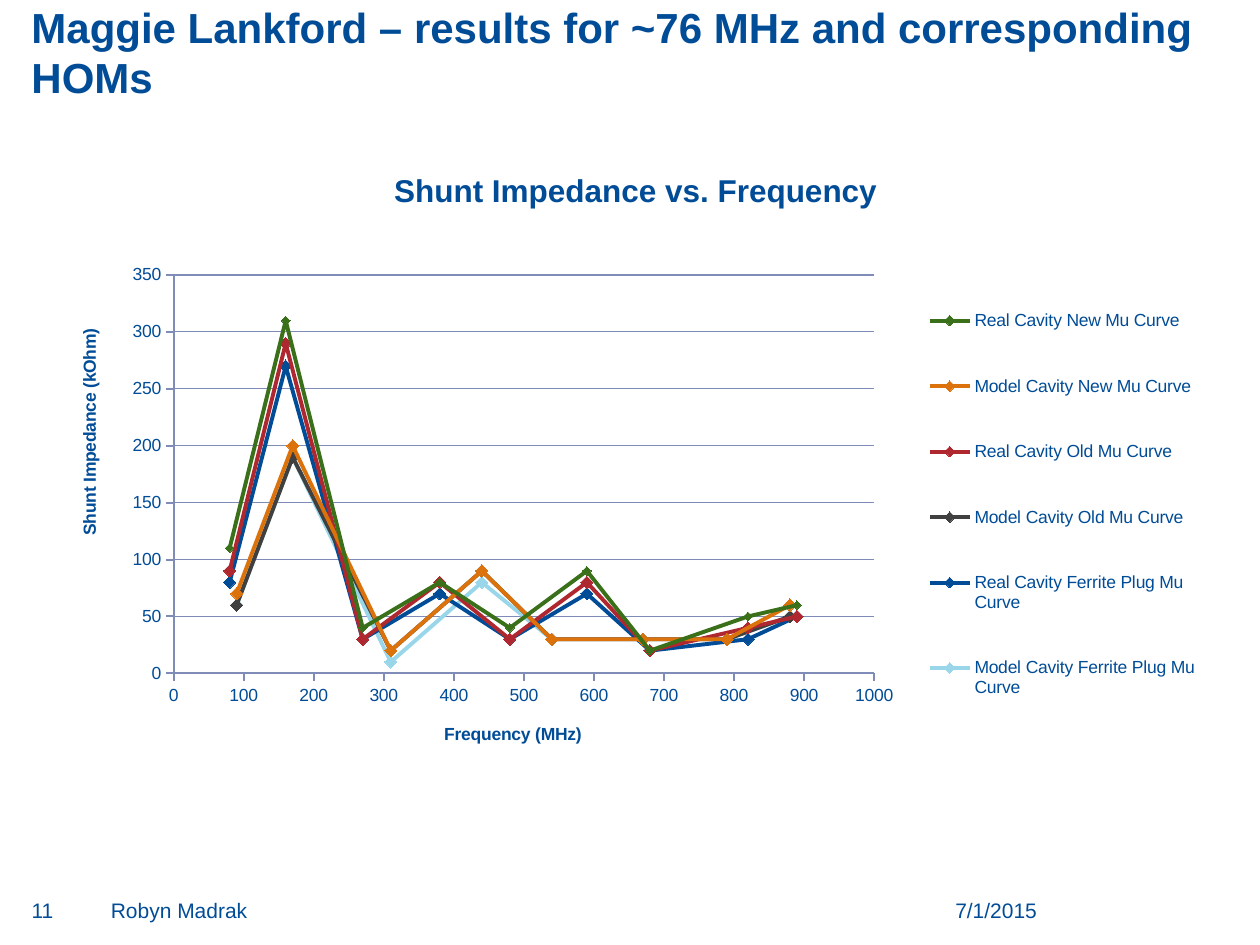
import pptx
import pptx.chart.data
import pptx.dml.color
import pptx.enum.chart
import pptx.enum.text
import pptx.oxml
import pptx.oxml.ns
import pptx.util
from pptx.util import Inches

FONT = "Arial"
COLORS = {"blue": "004C97", "green": "3A7019", "orange": "DB720C", "red": "AF272F",
          "gray": "404040", "sky": "99D6EA", "axis": "7F8CB8"}

# Resonant frequencies (MHz) of the two cavities
REAL = [80, 160, 270, 380, 480, 590, 680, 820, 890]
MODEL = [90, 170, 310, 440, 540, 670, 790, 880]

# Name, frequencies, shunt impedances (kOhm), colour, marker size
SERIES = [
    ("Real Cavity New Mu Curve", REAL, [110, 310, 40, 80, 40, 90, 20, 50, 60], "green", 5),
    ("Model Cavity New Mu Curve", MODEL, [70, 200, 20, 90, 30, 30, 30, 60], "orange", 7),
    ("Real Cavity Old Mu Curve", REAL, [90, 290, 30, 80, 30, 80, 20, 40, 50], "red", 7),
    ("Model Cavity Old Mu Curve", MODEL, [60, 190, 20, 90, 30, 30, 30, 50], "gray", 7),
    ("Real Cavity Ferrite Plug Mu Curve", REAL, [80, 270, 30, 70, 30, 70, 20, 30, 50], "blue", 7),
    ("Model Cavity Ferrite Plug Mu Curve", MODEL, [60, 190, 10, 80, 30, 30, 30, 50], "sky", 7),
]


def rgb(name):
    return pptx.dml.color.RGBColor.from_string(COLORS[name])


class SlideBuilder:
    def __init__(self, slide):
        self.slide = slide

    def style_font(self, font, size, bold=False):
        font.name = FONT
        font.size = pptx.util.Pt(size)
        font.bold = bold
        font.color.rgb = rgb("blue")

    def style_line(self, line, color, width):
        line.color.rgb = rgb(color)
        line.width = pptx.util.Pt(width)

    def text(self, text, left, top, width, height, size, bold=False, align="LEFT", anchor="TOP"):
        s = self.slide.shapes.add_textbox(Inches(left), Inches(top), Inches(width), Inches(height))
        tf = s.text_frame
        tf.word_wrap = True
        tf.margin_left = tf.margin_right = tf.margin_top = tf.margin_bottom = 0
        tf.vertical_anchor = getattr(pptx.enum.text.MSO_ANCHOR, anchor)
        p = tf.paragraphs[0]
        p.alignment = getattr(pptx.enum.text.PP_ALIGN, align)
        r = p.add_run()
        r.text = text
        self.style_font(r.font, size, bold)

    def place(self, element, x, y, w=None, h=None, inner=False):
        """Give a chart part a fixed place, as fractions of the chart."""
        for old in element.findall(pptx.oxml.ns.qn("c:layout")):
            element.remove(old)
        tags = '<c:layoutTarget val="inner"/>' if inner else ""
        tags += '<c:xMode val="edge"/><c:yMode val="edge"/>'
        for tag, value in zip("xywh", (x, y, w, h)):
            if value is not None:
                tags += f'<c:{tag} val="{value}"/>'
        layout = pptx.oxml.parse_xml(
            f'<c:layout {pptx.oxml.ns.nsdecls("c")}><c:manualLayout>{tags}'
            '</c:manualLayout></c:layout>')
        overlay = element.find(pptx.oxml.ns.qn("c:overlay"))
        if overlay is None:
            element.insert(0, layout)
        else:
            overlay.addprevious(layout)

    def chart_title(self, owner, text, size):
        r = owner.text_frame.paragraphs[0].add_run()
        r.text = text
        self.style_font(r.font, size, True)

    def axis(self, axis, title, maximum, step, grid):
        axis.minimum_scale, axis.maximum_scale, axis.major_unit = 0, maximum, step
        axis.major_tick_mark = pptx.enum.chart.XL_TICK_MARK.OUTSIDE
        axis.minor_tick_mark = pptx.enum.chart.XL_TICK_MARK.NONE
        axis.has_major_gridlines = grid
        if grid:
            self.style_line(axis.major_gridlines.format.line, "axis", 0.6)
        self.style_line(axis.format.line, "axis", 1.1)
        self.style_font(axis.tick_labels.font, 10)
        self.chart_title(axis.axis_title, title, 10)

    def scatter(self, left, top, width, height):
        data = pptx.chart.data.XyChartData()
        for name, xs, ys, _, _ in SERIES:
            series = data.add_series(name)
            for x, y in zip(xs, ys):
                series.add_data_point(x, y)
        chart = self.slide.shapes.add_chart(
            pptx.enum.chart.XL_CHART_TYPE.XY_SCATTER_LINES, Inches(left), Inches(top),
            Inches(width), Inches(height), data).chart
        self.style_font(chart.font, 10)

        # Title, axes and plot area
        chart.has_title = True
        self.chart_title(chart.chart_title, "Shunt Impedance vs. Frequency", 18)
        self.place(chart.chart_title._element, 0.29, 0.03)
        self.axis(chart.category_axis, "Frequency (MHz)", 1000, 100, False)
        self.axis(chart.value_axis, "Shunt Impedance (kOhm)", 350, 50, True)
        self.place(chart.value_axis.axis_title._element, 0.02, 0.27)
        plot = chart.plots[0]
        plot.vary_by_categories = False
        self.place(plot._element.getparent(), 0.105, 0.195, 0.603, 0.591, inner=True)

        # Legend
        chart.has_legend = True
        chart.legend.position = pptx.enum.chart.XL_LEGEND_POSITION.RIGHT
        chart.legend.include_in_layout = False
        self.style_font(chart.legend.font, 10)
        self.place(chart.legend._element, 0.75, 0.18, 0.24, 0.71)

        # Lines and diamond markers
        for series, (_, _, _, color, size) in zip(plot.series, SERIES):
            series.smooth = False
            self.style_line(series.format.line, color, 2.25)
            marker = series.marker
            marker.style = pptx.enum.chart.XL_MARKER_STYLE.DIAMOND
            marker.size = size
            marker.format.fill.solid()
            marker.format.fill.fore_color.rgb = rgb(color)
            self.style_line(marker.format.line, color, 0.75)


def main():
    prs = pptx.Presentation()
    prs.slide_width, prs.slide_height = Inches(10), Inches(7.5)
    builder = SlideBuilder(prs.slides.add_slide(prs.slide_layouts[6]))

    # Heading
    builder.text("Maggie Lankford – results for ~76 MHz and corresponding HOMs",
                 0.25, 0.11, 9.5, 0.7, 24, bold=True, anchor="BOTTOM")
    # Chart
    builder.scatter(0.41, 1.14, 9.22, 5.35)
    # Footer
    builder.text("7/1/2015", 7.05, 7.12, 1.18, 0.26, 12, align="RIGHT")
    builder.text("Robyn Madrak", 0.88, 7.12, 5.88, 0.26, 12)
    builder.text("11", 0.25, 7.12, 0.49, 0.26, 12)

    prs.save("out.pptx")


if __name__ == "__main__":
    main()
